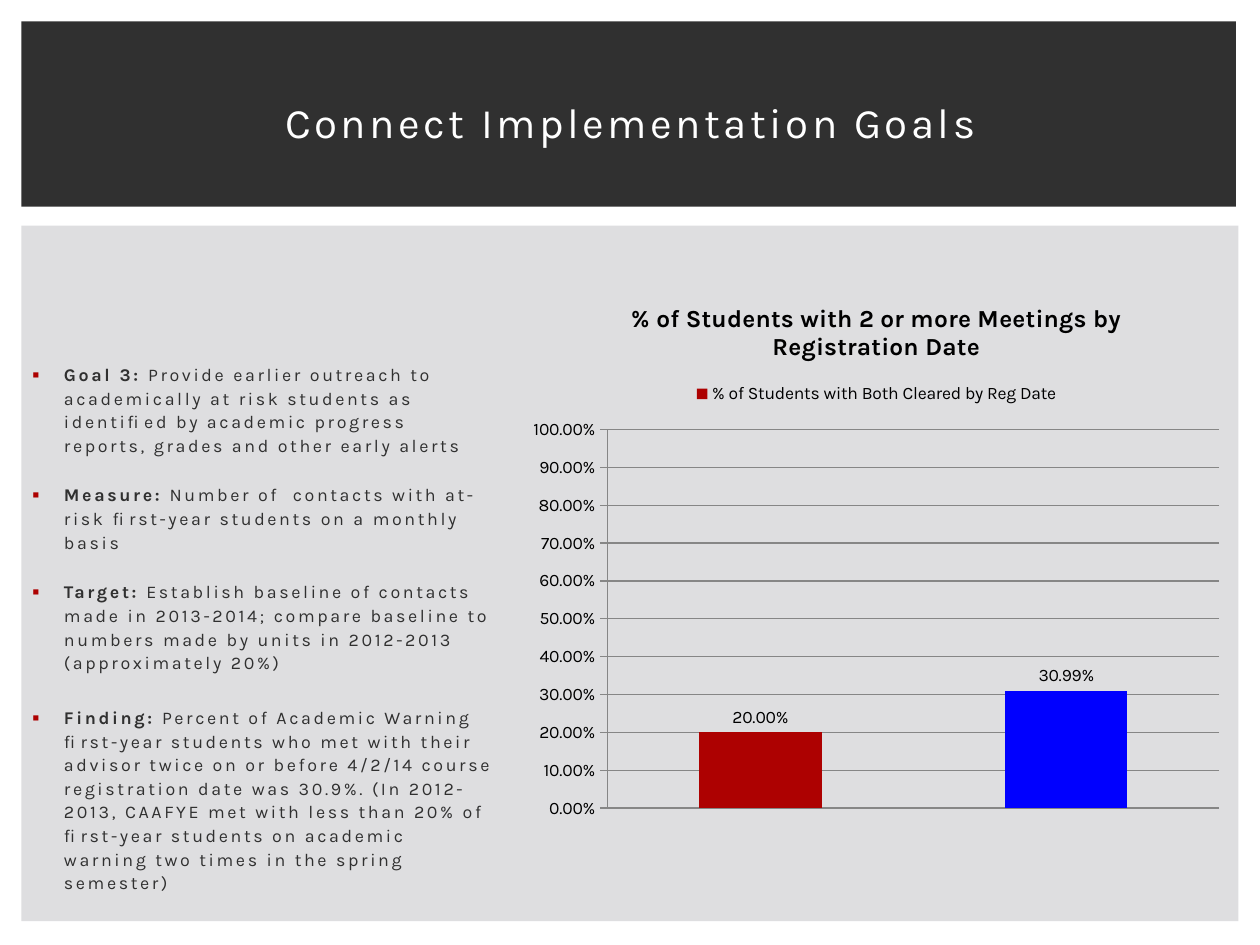
from dataclasses import dataclass

import lxml.etree
import pptx
import pptx.chart.data
import pptx.dml.color
import pptx.enum.chart
import pptx.enum.shapes
import pptx.enum.text
import pptx.oxml.ns
import pptx.util
from pptx.util import Inches

FONT = "Karla"
COLORS = {
    "panel": "DEDEE0",
    "dark": "303030",
    "white": "FFFFFF",
    "black": "000000",
    "red": "AD0101",
    "blue": "0000FF",
    "grid": "868686",
}


@dataclass
class Panel:
    left: float
    top: float
    width: float
    height: float
    color: str


@dataclass
class Point:
    label: str
    text: str
    space_before: float


PANELS = [
    Panel(0.17, 1.79, 9.66, 5.52, "panel"),
    Panel(0.17, 0.17, 9.64, 1.47, "dark"),
]
POINTS = [
    Point("Goal 3: ", "Provide earlier outreach to academically at risk students as identified "
          "by academic progress reports, grades and other early alerts", 2),
    Point("Measure: ", "Number of  contacts with at-risk first-year students on a monthly basis", 15),
    Point("Target: ", "Establish baseline of contacts made in 2013-2014; compare baseline to "
          "numbers made by units in 2012-2013 (approximately 20%)", 15),
    Point("Finding: ", "Percent of Academic Warning first-year students who met with their advisor "
          "twice on or before 4/2/14 course registration date was 30.9%. (In 2012-2013, CAAFYE met "
          "with less than 20% of first-year students on academic warning two times in the spring "
          "semester)", 18),
]


def rgb(name: str) -> pptx.dml.color.RGBColor:
    return pptx.dml.color.RGBColor.from_string(COLORS[name])


def style_font(font, size: float, color: str, bold: bool = False) -> None:
    font.name = FONT
    font.size = pptx.util.Pt(size)
    font.bold = bold
    font.color.rgb = rgb(color)


def style_span(span, size: float, color: str, spacing: float, bold: bool = False) -> None:
    style_font(span.font, size, color, bold)
    span.font._element.set("spc", str(int(spacing * 100)))


def add_panel(page, panel: Panel):
    box = page.shapes.add_shape(
        pptx.enum.shapes.MSO_SHAPE.RECTANGLE,
        Inches(panel.left), Inches(panel.top), Inches(panel.width), Inches(panel.height))
    box.shadow.inherit = False
    box.fill.solid()
    box.fill.fore_color.rgb = rgb(panel.color)
    box.line.fill.background()
    return box


def add_bullet(para) -> None:
    properties = para._p.get_or_add_pPr()
    properties.set("marL", str(Inches(0.3)))
    properties.set("indent", str(Inches(-0.25)))
    qn = pptx.oxml.ns.qn
    color = lxml.etree.SubElement(properties, qn("a:buClr"))
    lxml.etree.SubElement(color, qn("a:srgbClr"), val=COLORS["red"])
    lxml.etree.SubElement(properties, qn("a:buFont"), typeface=FONT)
    lxml.etree.SubElement(properties, qn("a:buChar"), char="▪")


def add_points(page, points: list[Point]) -> None:
    box = page.shapes.add_textbox(Inches(0.11), Inches(2.82), Inches(3.93), Inches(3.97))
    frame = box.text_frame
    frame.word_wrap = True
    for index, point in enumerate(points):
        para = frame.add_paragraph() if index else frame.paragraphs[0]
        para.line_spacing = 1.1
        para.space_before = pptx.util.Pt(point.space_before)
        add_bullet(para)
        for text, bold in ((point.label, True), (point.text, False)):
            span = para.add_run()
            span.text = text
            style_span(span, 10.2, "dark", 1.5, bold)


def add_meetings_chart(page) -> None:
    data = pptx.chart.data.CategoryChartData(number_format="0.00%")
    data.categories = ["1", "2"]
    data.add_series("% of Students with Both Cleared by Reg Date", [0.2, 0.3099])
    chart = page.shapes.add_chart(
        pptx.enum.chart.XL_CHART_TYPE.COLUMN_CLUSTERED,
        Inches(4.12), Inches(2.22), Inches(5.67), Inches(4.36), data).chart
    style_font(chart.font, 10, "black")

    # Title and legend
    chart.has_title = True
    title = chart.chart_title.text_frame
    title.text = "% of Students with 2 or more Meetings by Registration Date"
    style_font(title.paragraphs[0].runs[0].font, 14, "black", True)
    chart.has_legend = True
    chart.legend.position = pptx.enum.chart.XL_LEGEND_POSITION.TOP
    chart.legend.include_in_layout = False

    # Axes
    chart.category_axis.visible = False
    axis = chart.value_axis
    axis.minimum_scale, axis.maximum_scale, axis.major_unit = 0, 1, 0.1
    axis.major_tick_mark = pptx.enum.chart.XL_TICK_MARK.OUTSIDE
    axis.tick_labels.number_format = "0.00%"
    axis.tick_labels.number_format_is_linked = False
    axis.has_major_gridlines = True
    for line in (axis.format.line, axis.major_gridlines.format.line):
        line.color.rgb = rgb("grid")
        line.width = pptx.util.Pt(0.75)

    # Columns and their labels
    plot = chart.plots[0]
    plot.gap_width = 150
    plot.vary_by_categories = False
    series = plot.series[0]
    series.format.fill.solid()
    series.format.fill.fore_color.rgb = rgb("red")
    for index, color in enumerate(("red", "blue")):
        fill = series.points[index].format.fill
        fill.solid()
        fill.fore_color.rgb = rgb(color)
    labels = series.data_labels
    labels.show_value = True
    labels.number_format = "0.00%"
    labels.number_format_is_linked = False
    labels.position = pptx.enum.chart.XL_LABEL_POSITION.OUTSIDE_END


def set_title(title, text: str) -> None:
    title.left, title.top = Inches(0.42), Inches(0.39)
    title.width, title.height = Inches(9.17), Inches(1.15)
    frame = title.text_frame
    frame.text = text
    frame.vertical_anchor = pptx.enum.text.MSO_ANCHOR.MIDDLE
    para = frame.paragraphs[0]
    para.alignment = pptx.enum.text.PP_ALIGN.CENTER
    style_span(para.runs[0], 24, "white", 2)


def main() -> None:
    deck = pptx.Presentation()
    deck.slide_width, deck.slide_height = Inches(10), Inches(7.5)
    page = deck.slides.add_slide(deck.slide_layouts[5])

    # Background panels go behind the title
    title = page.shapes.title
    for panel in PANELS:
        title.element.addprevious(add_panel(page, panel).element)

    set_title(title, "Connect Implementation Goals")
    add_points(page, POINTS)
    add_meetings_chart(page)
    deck.save("out.pptx")


if __name__ == "__main__":
    main()
